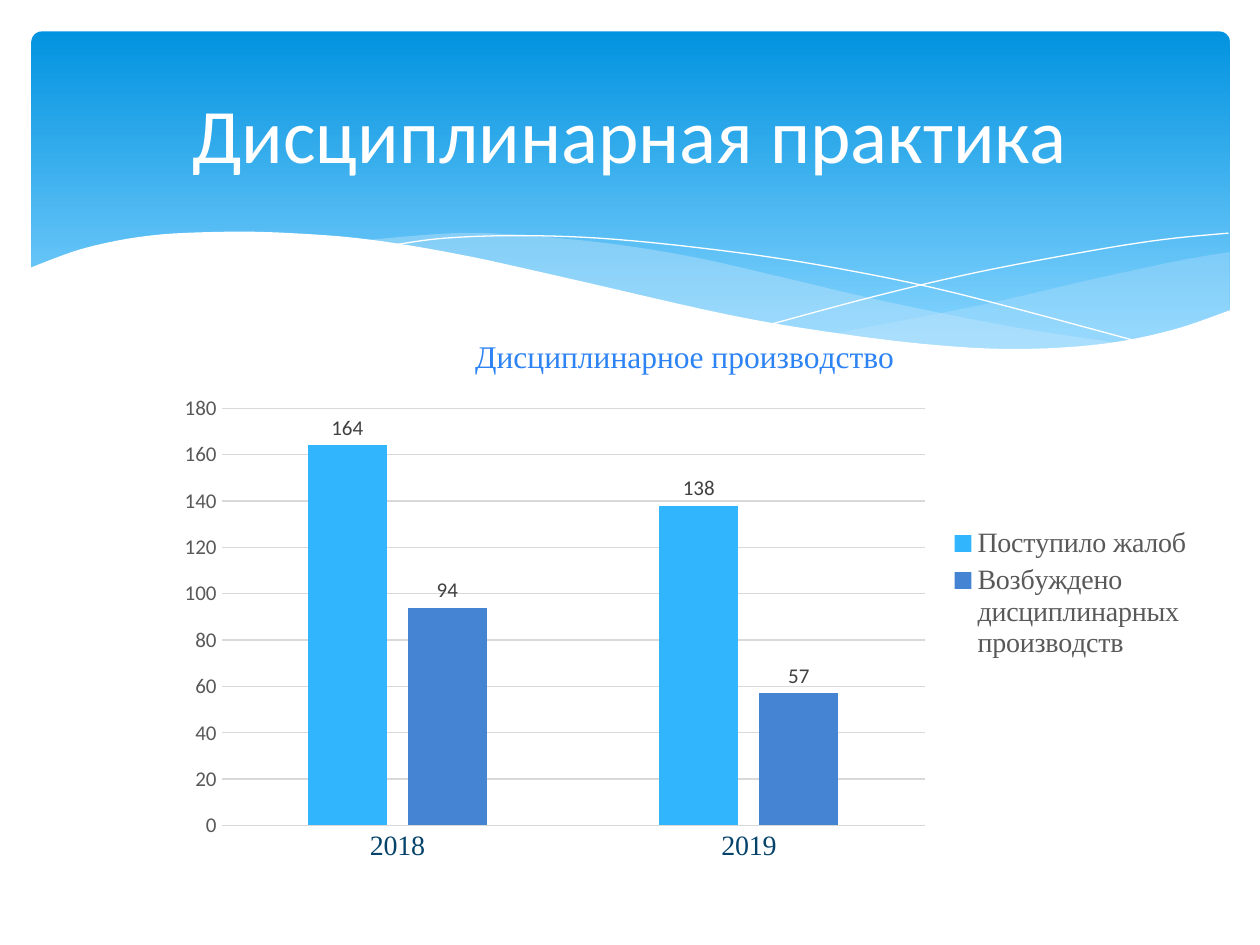
import dataclasses

import lxml.etree
import pptx
import pptx.chart.data
import pptx.dml.color
import pptx.enum.chart
import pptx.enum.shapes
import pptx.enum.text
import pptx.oxml.ns
import pptx.util


@dataclasses.dataclass(frozen=True)
class Theme:
    heading_font: str = "Calibri"
    text_font: str = "Times New Roman"
    white: str = "FFFFFF"
    banner_top: str = "0293E0"
    banner_bottom: str = "83D3FE"
    wave: str = "C6E7FC"
    chart_title: str = "2D83F4"
    category: str = "06436B"
    muted: str = "595959"
    label: str = "404040"
    grid: str = "D9D9D9"
    series: tuple = ("31B6FD", "4584D3")
    title_size: int = 44
    chart_title_size: int = 18
    text_size: int = 16
    label_size: int = 12


THEME = Theme()
COLUMNS, ROWS = 10, 7.5
CELL = pptx.util.Inches(1)

RIGHT_WAVE_TOP = [(9.76, 2), (9.35, 2.07), (8.61, 2.23), (7.79, 2.42), (6.61, 2.65)]
RIGHT_WAVE_BOTTOM = [(6.61, 2.65), (7.32, 2.74), (8.14, 2.78), (8.81, 2.73),
                     (9.35, 2.62), (9.76, 2.47)]
LONG_WAVE_TOP = [(8.93, 2.73), (8.07, 2.6), (7.06, 2.4), (6.29, 2.22), (5.55, 2.05),
                 (4.89, 1.94), (4.2, 1.87), (3.61, 1.85), (2.86, 1.91)]
LONG_WAVE_BOTTOM = [(2.86, 1.91), (3.62, 2.03), (4.49, 2.22), (5.66, 2.48), (6.65, 2.66),
                    (7.36, 2.75), (8.07, 2.78), (8.57, 2.77), (8.93, 2.73)]
FALLING_LINE = [(3.09, 1.95), (3.53, 1.89), (4.16, 1.87), (4.89, 1.9), (5.82, 2),
                (6.65, 2.13), (7.6, 2.33), (9.07, 2.72)]
RISING_LINE = [(6.13, 2.57), (6.95, 2.35), (7.76, 2.16), (8.66, 1.99), (9.24, 1.9),
               (9.75, 1.85)]
PAGE_EDGE = [(9.77, 2.46), (9.3, 2.62), (8.75, 2.73), (8.09, 2.77), (7.44, 2.74),
             (6.68, 2.65), (5.79, 2.5), (4.47, 2.2), (3.65, 2.02), (2.92, 1.9),
             (2.3, 1.85), (1.77, 1.84), (1.19, 1.87), (0.67, 1.97), (0.23, 2.13)]
PAGE_CORNERS = [(0.23, 3.29), (9.77, 3.29)]


def color(value):
    return pptx.dml.color.RGBColor.from_string(value)


def grid(*cells):
    return [round(cell * CELL) for cell in cells]


def set_values(target, values):
    for name, value in values.items():
        setattr(target, name, value)


def format_font(font, size, fill, name):
    set_values(font, {"size": pptx.util.Pt(size), "name": name, "bold": False})
    font.color.rgb = color(fill)


def format_line(line, fill, width):
    line.color.rgb = color(fill)
    line.width = pptx.util.Pt(width)


def smooth(points, steps=6):
    padded = [points[0], *points, points[-1]]
    curve = [points[0]]
    for a, b, c, d in zip(padded, padded[1:], padded[2:], padded[3:]):
        for step in range(1, steps + 1):
            t = step / steps
            curve.append(tuple(
                b[i] + 0.5 * t * (c[i] - a[i]
                                  + t * (2 * a[i] - 5 * b[i] + 4 * c[i] - d[i]
                                         + t * (3 * (b[i] - c[i]) + d[i] - a[i])))
                for i in (0, 1)))
    return curve


def add_outline(slide, points, closed):
    start, *rest = [grid(*point) for point in points]
    builder = slide.shapes.build_freeform(*start)
    builder.add_line_segments(rest, close=closed)
    shape = builder.convert_to_shape()
    shape.shadow.inherit = False
    return shape


def add_area(slide, points, fill, opacity=100):
    shape = add_outline(slide, points, True)
    shape.fill.solid()
    shape.fill.fore_color.rgb = color(fill)
    shape.line.fill.background()
    if opacity < 100:
        tag = pptx.oxml.ns.qn("a:srgbClr")
        for element in shape.fill._xPr.iter(tag):
            lxml.etree.SubElement(element, pptx.oxml.ns.qn("a:alpha"), val=str(opacity * 1000))


def add_curve(slide, points):
    shape = add_outline(slide, smooth(points), False)
    shape.fill.background()
    format_line(shape.line, THEME.white, 0)


def add_banner(slide):
    banner = slide.shapes.add_shape(pptx.enum.shapes.MSO_SHAPE.ROUNDED_RECTANGLE,
                                    *grid(0.25, 0.25, 9.51, 2.7))
    banner.adjustments[0] = 0.03
    banner.shadow.inherit = False
    banner.line.fill.background()
    banner.fill.gradient()
    banner.fill.gradient_angle = 270
    stops = [(0, THEME.banner_top), (0.9, THEME.banner_bottom)]
    for stop, (position, fill) in zip(banner.fill.gradient_stops, stops):
        stop.position = position
        stop.color.rgb = color(fill)


def add_title(slide, text):
    title = slide.shapes.title
    slide.shapes._spTree.append(title._element)
    set_values(title, dict(zip(("left", "top", "width", "height"), grid(0.5, 0.37, 9, 1.37))))
    title.text_frame.text = text
    title.text_frame.vertical_anchor = pptx.enum.text.MSO_ANCHOR.MIDDLE
    paragraph = title.text_frame.paragraphs[0]
    paragraph.alignment = pptx.enum.text.PP_ALIGN.CENTER
    format_font(paragraph.runs[0].font, THEME.title_size, THEME.white, THEME.heading_font)


def format_axes(chart):
    no_tick = pptx.enum.chart.XL_TICK_MARK.NONE
    for axis in (chart.category_axis, chart.value_axis):
        set_values(axis, {"major_tick_mark": no_tick, "minor_tick_mark": no_tick})
    format_font(chart.category_axis.tick_labels.font, THEME.text_size, THEME.category,
                THEME.text_font)
    format_line(chart.category_axis.format.line, THEME.grid, 0.75)
    value_axis = chart.value_axis
    set_values(value_axis, {"minimum_scale": 0, "maximum_scale": 180, "major_unit": 20})
    format_font(value_axis.tick_labels.font, THEME.label_size, THEME.muted, THEME.heading_font)
    value_axis.format.line.fill.background()
    format_line(value_axis.major_gridlines.format.line, THEME.grid, 0.75)


def add_column_chart(slide, title, categories, series_values):
    data = pptx.chart.data.CategoryChartData()
    data.categories = categories
    for name, values in series_values.items():
        data.add_series(name, values)
    chart = slide.shapes.add_chart(pptx.enum.chart.XL_CHART_TYPE.COLUMN_CLUSTERED,
                                   *grid(1.3, 2.49, 8.27, 4.44), data).chart
    chart.has_title = True
    chart.chart_title.text_frame.text = title
    chart.chart_title.include_in_layout = False
    format_font(chart.chart_title.text_frame.paragraphs[0].runs[0].font,
                THEME.chart_title_size, THEME.chart_title, THEME.text_font)
    chart.has_legend = True
    set_values(chart.legend, {"position": pptx.enum.chart.XL_LEGEND_POSITION.RIGHT,
                              "include_in_layout": False})
    format_font(chart.legend.font, THEME.text_size, THEME.muted, THEME.text_font)
    format_axes(chart)
    set_values(chart.plots[0], {"gap_width": 219, "overlap": -27, "vary_by_categories": False})
    for series, fill in zip(chart.plots[0].series, THEME.series):
        series.format.fill.solid()
        series.format.fill.fore_color.rgb = color(fill)
        labels = series.data_labels
        set_values(labels, {"show_value": True,
                            "position": pptx.enum.chart.XL_LABEL_POSITION.OUTSIDE_END})
        format_font(labels.font, THEME.label_size, THEME.label, THEME.heading_font)


def main():
    presentation = pptx.Presentation()
    presentation.slide_width, presentation.slide_height = grid(COLUMNS, ROWS)
    slide = presentation.slides.add_slide(presentation.slide_layouts[5])
    add_banner(slide)
    add_area(slide, smooth(RIGHT_WAVE_TOP) + smooth(RIGHT_WAVE_BOTTOM), THEME.wave, 29)
    add_area(slide, smooth(LONG_WAVE_TOP) + smooth(LONG_WAVE_BOTTOM), THEME.wave, 40)
    add_curve(slide, FALLING_LINE)
    add_curve(slide, RISING_LINE)
    add_area(slide, smooth(PAGE_EDGE) + PAGE_CORNERS, THEME.white)
    add_title(slide, "Дисциплинарная практика")
    add_column_chart(slide, "Дисциплинарное производство", ["2018", "2019"], {
        "Поступило жалоб": (164, 138),
        "Возбуждено дисциплинарных производств": (94, 57),
    })
    presentation.save("out.pptx")


if __name__ == "__main__":
    main()
